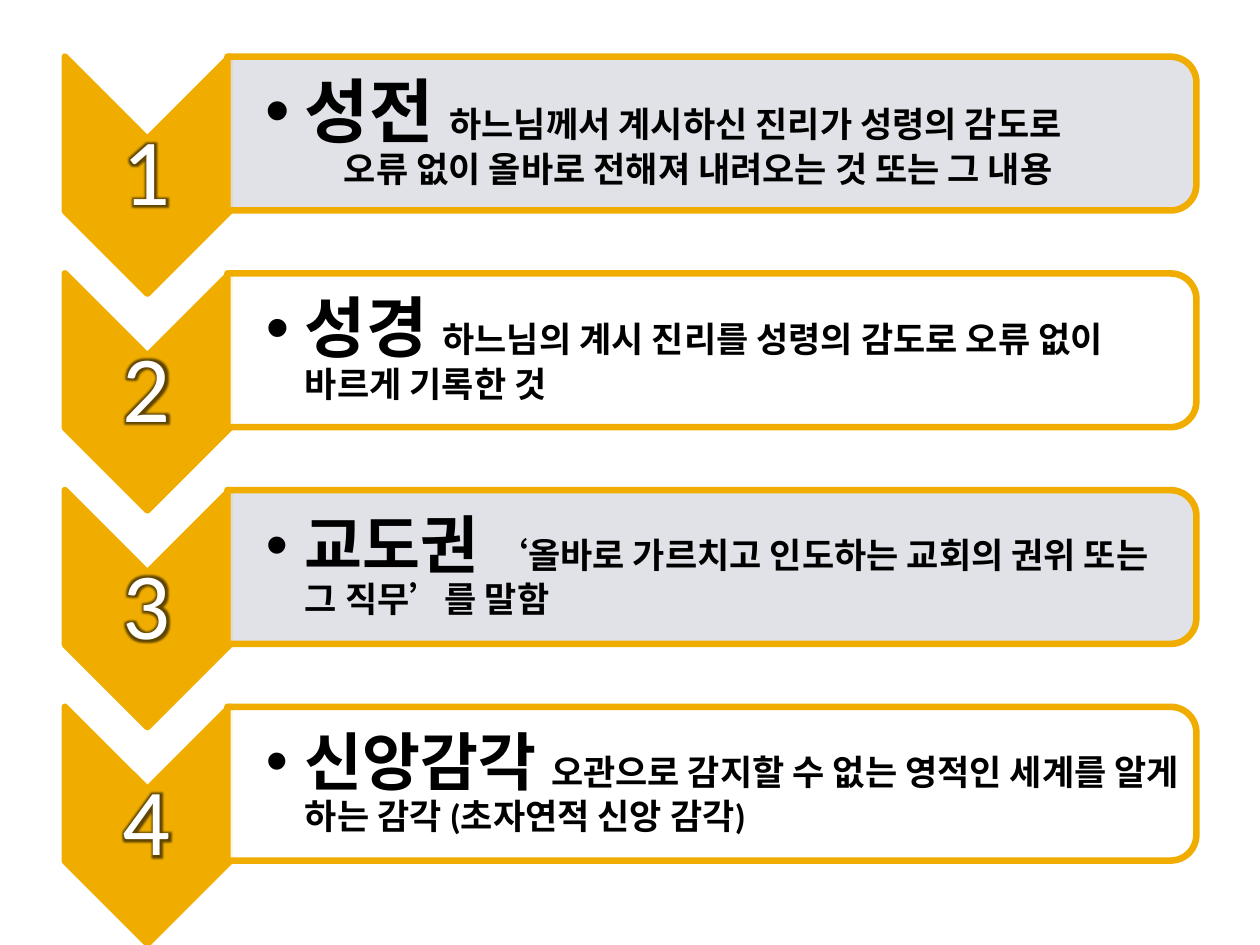
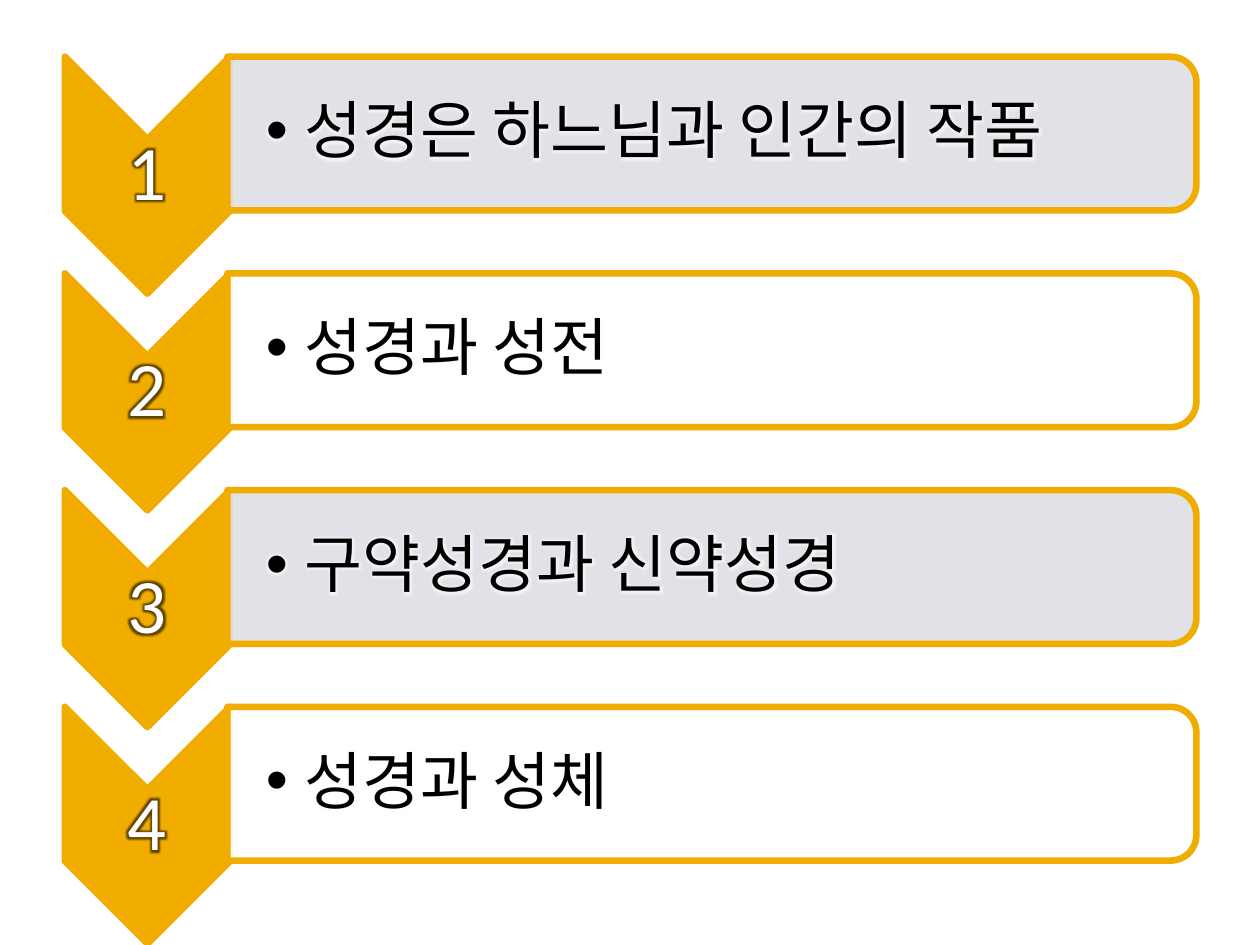
from lxml.etree import SubElement as Sub
from pptx import Presentation
from pptx.dml.color import RGBColor as RGB
from pptx.enum.shapes import MSO_SHAPE as Shape
from pptx.enum.text import MSO_ANCHOR as Anchor, PP_ALIGN as Align
from pptx.oxml.ns import qn
from pptx.util import Inches, Pt

HUES = {"gold": "F0AD00", "grey": "DDDFE5", "white": "FFFFFF", "black": "000000"}
PITCH = 1.72                     # distance from row to row
ARROW = {"x": 1.17, "y": 1.39, "wide": 1.31, "high": 1.88}
PANEL = {"x": 5.65, "y": 1.06, "wide": 7.69, "high": 1.22}
HEAD = {"name": "Calibri", "bold": True}
NOTE = {"name": "Calibri", "bold": True, "size": Pt(20)}
LINE = {"name": "Arial", "size": Pt(36)}
INDENT = 0.31

# Each row is a list of paragraphs, each paragraph a list of (text, format) runs.
SLIDES = [
    {"digit": 54, "glow": None, "rows": [
        [[("성전 ", HEAD | {"size": Pt(40)}),
          ("하느님께서 계시하신 진리가 성령의 감도로", NOTE)],
         [("오류 없이 올바로 전해져 내려오는 것 또는 그 내용", NOTE)]],
        [[("성경 ", HEAD | {"size": Pt(38)}),
          ("하느님의 계시 진리를 성령의 감도로 오류 없이 바르게 기록한 것", NOTE)]],
        [[("교도권 ", HEAD | {"size": Pt(36)}),
          ("‘올바로 가르치고 인도하는 교회의 권위 또는 그 직무’를 말함", NOTE)]],
        [[("신앙감각 ", HEAD | {"size": Pt(36)}),
          ("오관으로 감지할 수 없는 영적인 세계를 알게 하는 감각 (초자연적 신앙 감각)", NOTE)]],
    ]},
    {"digit": 44, "glow": "white", "rows": [
        [[(text, LINE)]] for text in (
            "성경은 하느님과 인간의 작품", "성경과 성전", "구약성경과 신약성경", "성경과 성체")
    ]},
]


def turned(slide, kind, spot, row, hue):
    """Add a shape turned by 90 degrees, placed by its centre and its size as seen."""
    wide, high = spot["high"], spot["wide"]
    mid = spot["y"] + row * PITCH
    shape = slide.shapes.add_shape(kind, Inches(spot["x"] - wide / 2),
                                   Inches(mid - high / 2), Inches(wide), Inches(high))
    shape.rotation = 90
    shape.shadow.inherit = False
    shape.fill.solid()
    shape.fill.fore_color.rgb = RGB.from_string(HUES[hue])
    shape.line.color.rgb = RGB.from_string(HUES["gold"])
    shape.line.width = Pt(3.78)
    return shape


def write(par, text, style, hue, glow):
    run = par.add_run()
    run.text = text
    for key, value in style.items():
        setattr(run.font, key, value)
    run.font.color.rgb = RGB.from_string(HUES[hue])
    if glow:
        effect = Sub(run.font._element, qn("a:effectLst"))
        run.font.fill._xPr.find(qn("a:solidFill")).addnext(effect)
        halo = Sub(effect, qn("a:glow"), rad=str(Pt(5)))
        color = Sub(halo, qn("a:srgbClr"), val=HUES[glow])
        Sub(color, qn("a:alpha"), val="60000")


deck = Presentation()
deck.slide_width, deck.slide_height = Inches(10), Inches(7.5)

for plan in SLIDES:
    slide = deck.slides.add_slide(deck.slide_layouts[6])
    for row, pars in enumerate(plan["rows"]):
        turned(slide, Shape.CHEVRON, ARROW, row, "gold")
        panel = turned(slide, Shape.ROUND_2_SAME_RECTANGLE, PANEL, row,
                       "white" if row % 2 else "grey")
        tint = panel.fill._xPr.find(qn("a:solidFill"))[0]
        Sub(tint, qn("a:alpha"), val="90000")

        # Number on the arrow
        box = slide.shapes.add_textbox(
            Inches(0.51), Inches(1.11 + row * PITCH), Inches(1.31), Inches(0.56))
        frame = box.text_frame
        frame.word_wrap, frame.vertical_anchor = True, Anchor.MIDDLE
        par = frame.paragraphs[0]
        par.alignment, par.line_spacing = Align.CENTER, 0.9
        write(par, str(row + 1), {"name": "Calibri", "size": Pt(plan["digit"])},
              "white", "black")

        # Text on the panel
        box = slide.shapes.add_textbox(
            Inches(1.82), Inches(0.51 + row * PITCH), Inches(7.63), Inches(1.1))
        frame = box.text_frame
        frame.word_wrap, frame.vertical_anchor = True, Anchor.MIDDLE
        frame.margin_left = Inches(0.29)
        frame.margin_top = frame.margin_right = frame.margin_bottom = Inches(0.03)
        for place, runs in enumerate(pars):
            par = frame.add_paragraph() if place else frame.paragraphs[0]
            par.line_spacing = 0.9
            props = par._p.get_or_add_pPr()
            props.set("marL", str(Inches(INDENT * (place + 1))))
            if not place:
                props.set("indent", str(Inches(-INDENT)))
                Sub(props, qn("a:buFont"), typeface="Arial")
                Sub(props, qn("a:buChar"), char="•")
            for text, style in runs:
                write(par, text, style, "black", plan["glow"])

deck.save("out.pptx")
